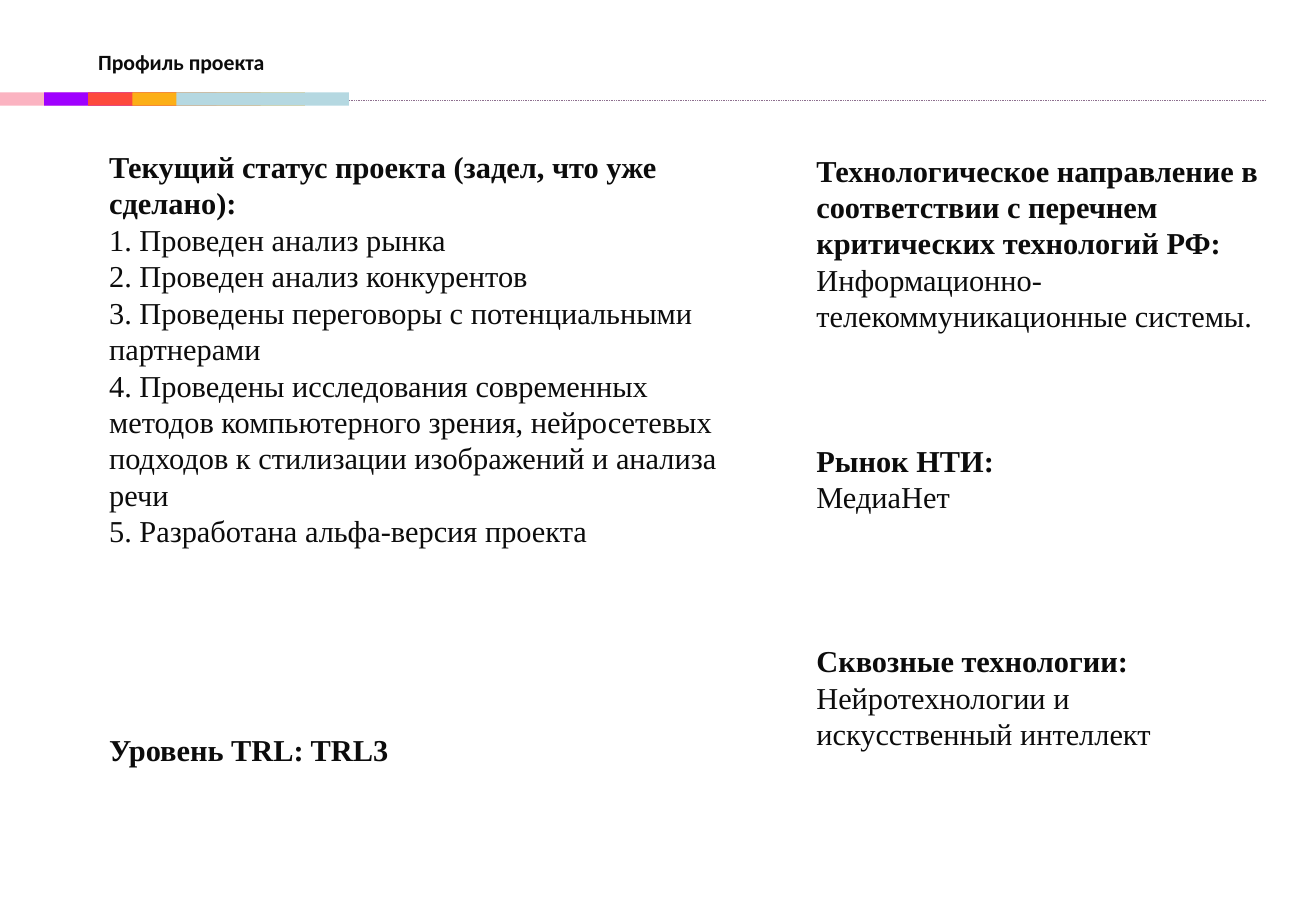
from dataclasses import dataclass

from lxml import etree
from pptx import Presentation
from pptx.dml.color import RGBColor
from pptx.enum.dml import MSO_LINE
from pptx.enum.shapes import MSO_CONNECTOR, MSO_SHAPE
from pptx.enum.text import MSO_AUTO_SIZE
from pptx.oxml.ns import qn
from pptx.util import Inches, Pt

RECTANGLE = MSO_SHAPE.RECTANGLE
STRAIGHT = MSO_CONNECTOR.STRAIGHT
DOTTED = MSO_LINE.ROUND_DOT
GROW = MSO_AUTO_SIZE.SHAPE_TO_FIT_TEXT

WIDTH, HEIGHT = Inches(10.83), Inches(7.5)
COLUMN, ROW = WIDTH / 108.3, HEIGHT / 75


@dataclass(frozen=True)
class Theme:
    ink: str = "0C0C0C"
    rule: str = "8E708F"
    bands: tuple = ("FBB3C1", "9F00FF", "FD493D", "FCAF17", "B5D8E1")
    title_font: str = "Calibri"
    body_font: str = "Times New Roman"
    title_size: float = 12.9
    body_size: float = 18


THEME = Theme()


def grid(left, top, width, height):
    return (round(left * COLUMN), round(top * ROW),
            round(width * COLUMN), round(height * ROW))


def add_text(page, box, lines, bold_lines, font, size, wrap=True):
    frame = page.shapes.add_textbox(*box).text_frame
    frame.word_wrap = wrap
    frame.auto_size = GROW
    frame.text = "\n".join(lines)
    for index, para in enumerate(frame.paragraphs):
        for span in para.runs:
            span.font.name = font
            span.font.size = Pt(size)
            span.font.bold = index in bold_lines
            span.font.color.rgb = RGBColor.from_string(THEME.ink)
    return frame


def add_header(page, box, title):
    left, top, width, height = box
    add_text(page, (left + round(7.1 * COLUMN), top, round(15.8 * COLUMN), round(3.2 * ROW)),
             [title], {0}, THEME.title_font, THEME.title_size, wrap=False)

    rule_top = top + round(4.8 * ROW)
    rule = page.shapes.add_connector(STRAIGHT, left + round(4.2 * COLUMN), rule_top,
                                     left + width - round(4.1 * COLUMN), rule_top)
    rule.line.color.rgb = RGBColor.from_string(THEME.rule)
    rule.line.width = Pt(0.5)
    rule.line.dash_style = DOTTED
    etree.SubElement(rule._element.spPr, qn("a:effectLst"))

    band_height = round(1.1 * ROW)
    for index, color in enumerate(THEME.bands):
        band = page.shapes.add_shape(RECTANGLE, left + round(index * 3.63 * COLUMN),
                                     top + height - band_height,
                                     round(14.2 * COLUMN), band_height)
        band.shadow.inherit = False
        band.fill.solid()
        band.fill.fore_color.rgb = RGBColor.from_string(color)
        band.line.fill.background()


def add_status(page, box, heading, steps, level):
    lines = [heading, *(f"{number}. {step}" for number, step in enumerate(steps, 1)), level]
    frame = add_text(page, box, lines, {0, len(lines) - 1}, THEME.body_font, THEME.body_size)
    frame.paragraphs[-1].space_before = Pt(108)


def add_topics(page, box, topics):
    left, top, width, height = box
    for offset, share, heading, detail in topics:
        add_text(page, (left, top + round(offset * ROW), width, round(share * ROW)),
                 [heading, detail], {0}, THEME.body_font, THEME.body_size)


def main():
    deck = Presentation()
    deck.slide_width, deck.slide_height = WIDTH, HEIGHT
    page = deck.slides.add_slide(deck.slide_layouts[6])

    add_header(page, grid(0, 3.5, 108.3, 5.2), "Профиль проекта")
    add_status(page, grid(8, 11.7, 54.4, 61.6),
               "Текущий статус проекта (задел, что уже сделано):",
               ["Проведен анализ рынка",
                "Проведен анализ конкурентов",
                "Проведены переговоры с потенциальными партнерами",
                "Проведены исследования современных методов компьютерного зрения, "
                "нейросетевых подходов к стилизации изображений и анализа речи",
                "Разработана альфа-версия проекта"],
               "Уровень TRL: TRL3")
    add_topics(page, grid(66.2, 12, 39, 53.5), [
        (0, 19.2,
         "Технологическое направление в соответствии с перечнем критических технологий РФ:",
         "Информационно-телекоммуникационные системы."),
        (23.9, 7.1, "Рынок НТИ:", "МедиаНет"),
        (40.4, 10.1, "Сквозные технологии:", "Нейротехнологии и искусственный интеллект"),
    ])
    deck.save("out.pptx")


if __name__ == "__main__":
    main()
